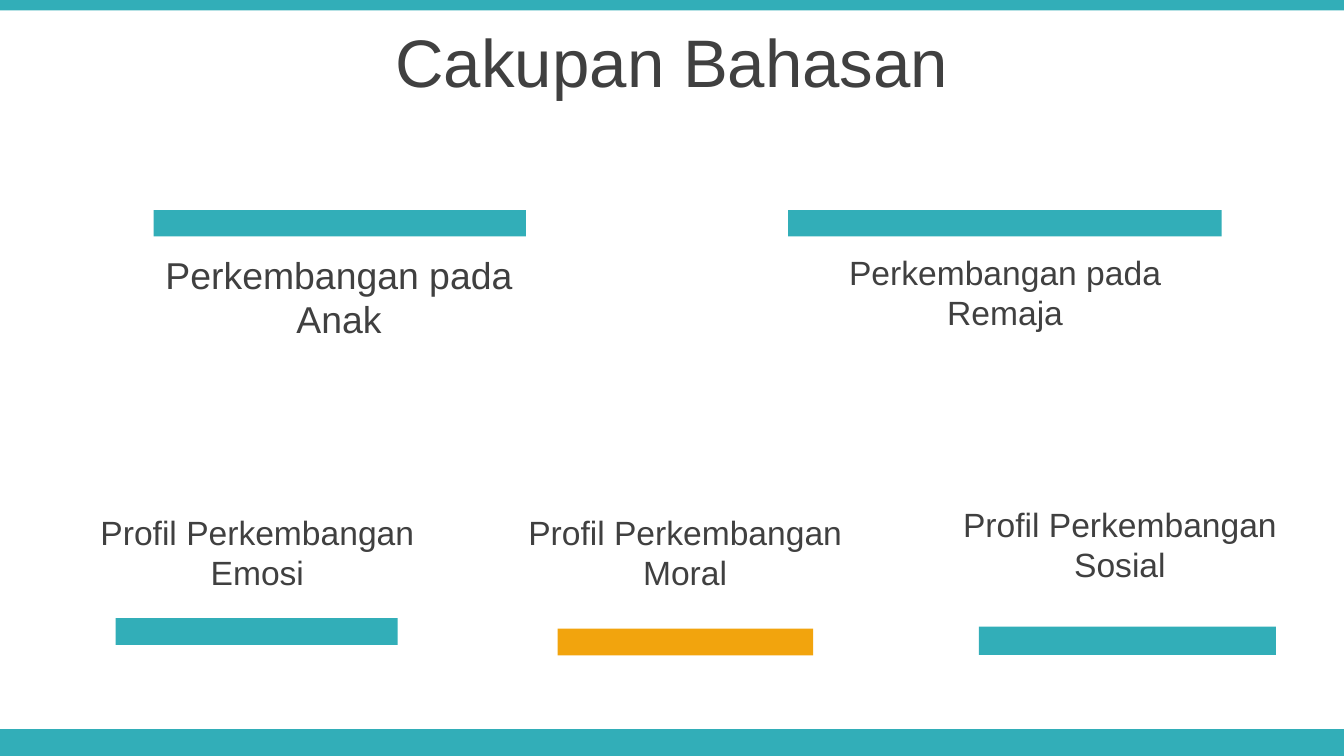
from pptx import Presentation
from pptx.dml.color import RGBColor
from pptx.enum.shapes import MSO_SHAPE
from pptx.enum.text import MSO_ANCHOR, PP_ALIGN
from pptx.util import Inches, Pt

RECT = MSO_SHAPE.RECTANGLE
CENTER = PP_ALIGN.CENTER
TOP, MIDDLE = MSO_ANCHOR.TOP, MSO_ANCHOR.MIDDLE

theme = {
    "font": "Arial",
    "ink": RGBColor.from_string("404040"),
    "teal": RGBColor.from_string("32AEB8"),
    "gold": RGBColor.from_string("F2A40D"),
    "title": Pt(36),
    "large": Pt(20),
    "label": Pt(18),
}

deck = Presentation()
deck.slide_width = Inches(10)
deck.slide_height = deck.slide_width * 9 // 16
slide = deck.slides.add_slide(deck.slide_layouts[6])
col = deck.slide_width / 100
row = deck.slide_height / 56.25


def add_bar(left, top, width, height, color):
    spot = [round(n) for n in (left * col, top * row, width * col, height * row)]
    bar = slide.shapes.add_shape(RECT, *spot)
    bar.shadow.inherit = False
    bar.fill.solid()
    bar.fill.fore_color.rgb = theme[color]
    bar.line.fill.background()


def add_label(text, left, top, width, height, size, anchor=TOP):
    spot = [round(n) for n in (left * col, top * row, width * col, height * row)]
    box = slide.shapes.add_textbox(*spot)
    frame = box.text_frame
    frame.word_wrap = True
    frame.vertical_anchor = anchor
    frame.text = text
    line = frame.paragraphs[0]
    line.alignment = CENTER
    font = line.runs[0].font
    font.name = theme["font"]
    font.size = theme[size]
    font.color.rgb = theme["ink"]


add_bar(0, 54.25, 100, 2, "teal")
add_bar(0, 0, 100, 0.77, "teal")
add_label("Cakupan Bahasan", 0, 1.4, 100, 6.3, "title", MIDDLE)

stages = [
    ("Anak", 9.13, 7.7, "large", 11.43, 27.7),
    ("Remaja", 58.68, 7.1, "label", 58.65, 32.25),
]
for name, left, height, size, start, width in stages:
    add_bar(start, 15.63, width, 1.97, "teal")
    add_label(f"Perkembangan pada {name}", left, 18.24, 32.2, height, size)

topics = [
    ("Emosi", 6.3, 37.6, 8.6, 46, 21, 2, "teal"),
    ("Moral", 38.13, 37.6, 41.5, 46.77, 19, 2, "gold"),
    ("Sosial", 70.48, 37, 72.83, 46.63, 22.1, 2.1, "teal"),
]
for name, left, top, start, base, width, height, color in topics:
    add_label(f"Profil Perkembangan {name}", left, top, 25.7, 7.1, "label")
    add_bar(start, base, width, height, color)

deck.save("out.pptx")
